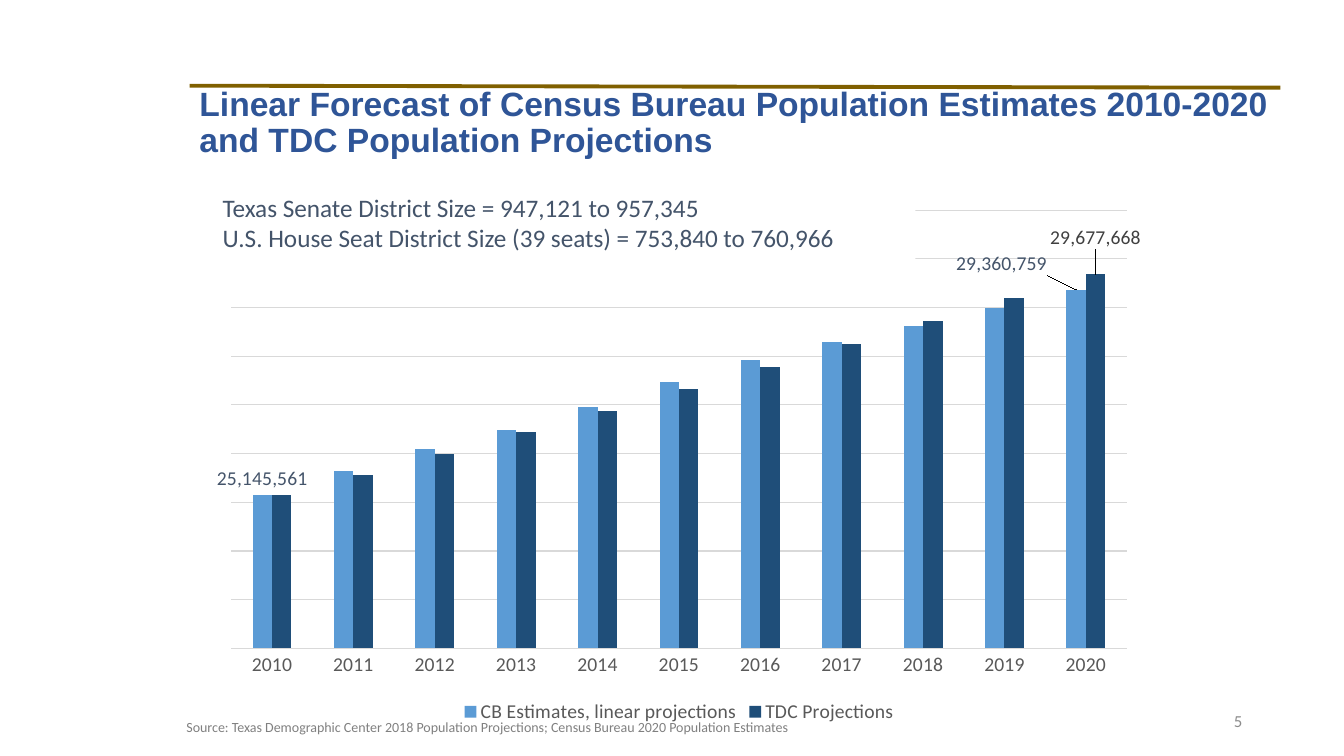
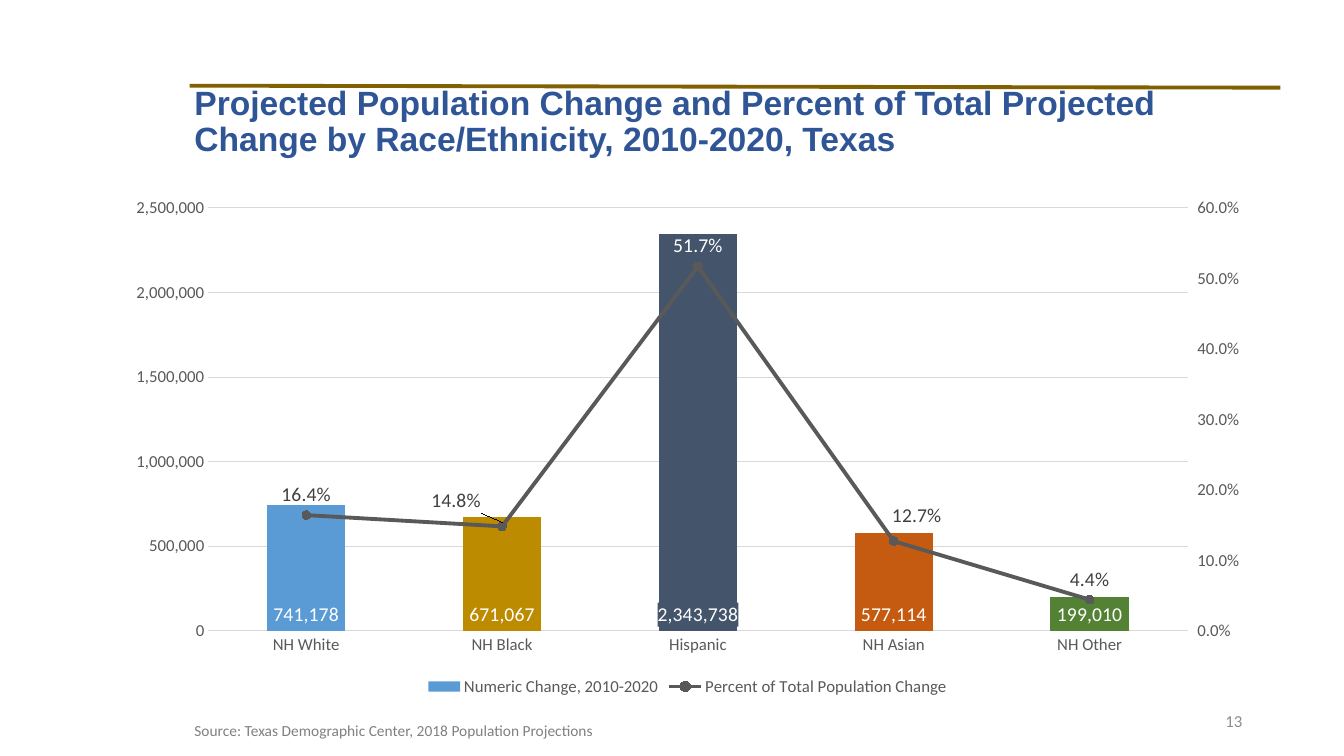
"""Build two slides of Texas population charts."""
from pptx import Presentation, oxml
from pptx.chart.axis import ValueAxis
from pptx.chart.data import CategoryChartData
from pptx.dml.color import RGBColor
from pptx.enum import chart as ch, shapes, text
from pptx.oxml import ns
from pptx.util import Inches, Pt

WHITE = RGBColor(0xFF, 0xFF, 0xFF)
BLACK = RGBColor(0, 0, 0)
GOLD_RULE = RGBColor(0x80, 0x60, 0x00)
TITLE_BLUE = RGBColor(0x2F, 0x55, 0x97)
SLATE = RGBColor(0x44, 0x54, 0x6A)
SKY = RGBColor(0x5B, 0x9B, 0xD5)
NAVY = RGBColor(0x1F, 0x4E, 0x79)
MUSTARD = RGBColor(0xBC, 0x8B, 0x00)
RUST = RGBColor(0xC5, 0x5A, 0x11)
GREEN = RGBColor(0x54, 0x82, 0x35)
INK = RGBColor(0x40, 0x40, 0x40)
AXIS_GRAY = RGBColor(0x59, 0x59, 0x59)
SOURCE_GRAY = RGBColor(0x80, 0x80, 0x80)
NUMBER_GRAY = RGBColor(0x8C, 0x8C, 0x8C)
GRID_GRAY = RGBColor(0xD9, 0xD9, 0xD9)

COUNT = "#,##0"
PERCENT = "0.0%"
ABOVE = ch.XL_LABEL_POSITION.ABOVE
OUTSIDE = ch.XL_LABEL_POSITION.OUTSIDE_END

YEARS = [str(year) for year in range(2010, 2021)]
ESTIMATES = [25145561, 25645629, 26084481, 26480266, 26964333, 27470056,
             27914410, 28295273, 28628666, 28995881, 29360067]
PROJECTIONS = [25145561, 25567291, 25996722, 26433242, 26876429, 27326193,
               27782691, 28245982, 28716123, 29193268, 29677668]
GROUPS = ["NH White", "NH Black", "Hispanic", "NH Asian", "NH Other"]
CHANGES = [741178, 671067, 2343738, 577114, 199010]
SHARES = [0.164, 0.148, 0.517, 0.127, 0.044]


def inches(*lengths):
    return [Inches(length) for length in lengths]


def chart_xml(tag, body):
    return oxml.parse_xml(f"<c:{tag} {ns.nsdecls('c', 'a')}>{body}</c:{tag}>")


def style_font(font, size, color, name="Calibri", bold=False):
    font.size, font.name, font.bold = Pt(size), name, bold
    font.color.rgb = color


def fill_text(shape, content, size, color, name="Calibri", bold=False,
              align=text.PP_ALIGN.LEFT, anchor=text.MSO_ANCHOR.TOP,
              wrap=True, spacing=None):
    frame = shape.text_frame
    frame.text = content
    frame.word_wrap = wrap
    frame.vertical_anchor = anchor
    for para in frame.paragraphs:
        para.alignment = align
        para.line_spacing = spacing
        for span in para.runs:
            style_font(span.font, size, color, name, bold)


def add_text(page, at, content, size, color, **options):
    fill_text(page.shapes.add_textbox(*inches(*at)), content, size, color, **options)


def add_rule(page):
    rule = page.shapes.add_connector(shapes.MSO_CONNECTOR.STRAIGHT,
                                     *inches(1.88, 0.85, 12.7, 0.87))
    rule.line.color.rgb = GOLD_RULE
    rule.line.width = Pt(2.75)
    rule.element.spPr.append(oxml.parse_xml(f"<a:effectLst {ns.nsdecls('a')}/>"))


def add_page(deck, number):
    page = deck.slides.add_slide(deck.slide_layouts[6])
    add_rule(page)
    add_text(page, (9.42, 6.95, 3, 0.4), str(number), 12, NUMBER_GRAY,
             align=text.PP_ALIGN.RIGHT, anchor=text.MSO_ANCHOR.MIDDLE)
    return page


def add_title(page, at, content):
    add_text(page, at, content, 24, TITLE_BLUE, name="Arial", bold=True,
             anchor=text.MSO_ANCHOR.MIDDLE, spacing=0.9)


def place_plot(chart, plot_area):
    values = "".join(f'<c:{key} val="{value}"/>' for key, value in zip("xywh", plot_area))
    layout = chart_xml("layout", '<c:manualLayout><c:layoutTarget val="inner"/>'
                       f'<c:xMode val="edge"/><c:yMode val="edge"/>{values}</c:manualLayout>')
    plot_node = chart.element.xpath(".//c:plotArea")[0]
    for node in plot_node.xpath("./c:layout"):
        plot_node.remove(node)
    plot_node.insert(0, layout)


def add_column_chart(page, at, data, size, gap, plot_area):
    chart = page.shapes.add_chart(ch.XL_CHART_TYPE.COLUMN_CLUSTERED,
                                  *inches(*at), data).chart
    style_font(chart.font, size, BLACK)
    chart.has_title = False
    chart.has_legend = True
    chart.legend.position = ch.XL_LEGEND_POSITION.BOTTOM
    chart.legend.include_in_layout = False
    style_font(chart.legend.font, size, AXIS_GRAY)
    chart.plots[0].gap_width = gap
    chart.plots[0].vary_by_categories = False
    for axis in (chart.category_axis, chart.value_axis):
        axis.major_tick_mark = ch.XL_TICK_MARK.NONE
        style_font(axis.tick_labels.font, size, AXIS_GRAY)
    chart.value_axis.tick_labels.number_format = COUNT
    chart.value_axis.tick_labels.number_format_is_linked = False
    chart.value_axis.format.line.fill.background()
    for line in (chart.category_axis.format.line,
                 chart.value_axis.major_gridlines.format.line):
        line.color.rgb = GRID_GRAY
        line.width = Pt(0.75)
    place_plot(chart, plot_area)
    return chart


def paint(target, color):
    target.format.fill.solid()
    target.format.fill.fore_color.rgb = color


def label_series(series, position, number_format, color):
    labels = series.data_labels
    labels.show_value = True
    labels.position = position
    labels.number_format = number_format
    labels.number_format_is_linked = False
    style_font(labels.font, 14, color)


def label_point(chart, series, point, position, color, shift=None, words=None, fill=None):
    label = series.points[point].data_label
    if words:
        label.text_frame.text = words
        style_font(label.text_frame.paragraphs[0].runs[0].font, 14, color)
    else:
        style_font(label.font, 14, color)
    label.position = position
    node = chart.element.xpath(f".//c:ser[c:idx/@val='{series.index}']"
                               f"/c:dLbls/c:dLbl[c:idx/@val='{point}']")[0]
    if shift:
        node.xpath("./c:idx")[0].addnext(chart_xml(
            "layout", f'<c:manualLayout><c:x val="{shift[0]}"/>'
                      f'<c:y val="{shift[1]}"/></c:manualLayout>'))
    if fill:
        node.xpath("./c:txPr")[0].addprevious(chart_xml(
            "spPr", f'<a:solidFill><a:srgbClr val="{fill}"/></a:solidFill>'))


def set_leader_lines(chart, visible):
    for labels in chart.element.xpath(".//c:dLbls"):
        for node in labels.xpath("./c:showLeaderLines"):
            labels.remove(node)
        labels.append(chart_xml(
            "extLst", '<c:ext uri="{CE6537A1-D6FC-4f65-9D91-7224C49458BB}" '
            'xmlns:c15="http://schemas.microsoft.com/office/drawing/2012/chart">'
            f'<c15:showLeaderLines val="{int(visible)}"/></c:ext>'))


def move_to_right_axis(chart):
    """Turn the last column series into a line on a second axis."""
    columns = chart.element.xpath(".//c:barChart")[0]
    series = columns.xpath("./c:ser")[-1]
    for node in series.xpath("./c:invertIfNegative"):
        series.remove(node)
    lines = chart_xml("lineChart", '<c:grouping val="standard"/><c:varyColors val="0"/>'
                      '<c:marker val="1"/><c:axId val="5001"/><c:axId val="5002"/>')
    lines.insert(2, series)
    columns.addnext(lines)
    scaling = '<c:scaling><c:orientation val="minMax"/></c:scaling>'
    right = chart_xml("valAx", f'<c:axId val="5002"/>{scaling}<c:delete val="0"/>'
                      '<c:axPos val="r"/><c:majorTickMark val="out"/>'
                      '<c:minorTickMark val="none"/><c:tickLblPos val="nextTo"/>'
                      '<c:crossAx val="5001"/><c:crosses val="max"/>')
    hidden = chart_xml("catAx", f'<c:axId val="5001"/>{scaling}<c:delete val="1"/>'
                       '<c:axPos val="b"/><c:crossAx val="5002"/><c:crosses val="autoZero"/>')
    chart.element.xpath(".//c:valAx")[-1].addnext(right)
    right.addnext(hidden)
    axis = ValueAxis(right)
    axis.minimum_scale, axis.maximum_scale, axis.major_unit = 0, 0.6, 0.1
    axis.tick_labels.number_format = PERCENT
    axis.tick_labels.number_format_is_linked = False
    style_font(axis.tick_labels.font, 12, AXIS_GRAY)
    axis.format.line.fill.background()
    return chart.plots[1].series[0]


def build_forecast(deck):
    page = add_page(deck, 5)
    add_title(page, (1.88, 0.73, 10.82, 1),
              "Linear Forecast of Census Bureau Population Estimates 2010-2020 "
              "and TDC Population Projections")
    data = CategoryChartData(number_format=COUNT)
    data.categories = YEARS
    data.add_series("CB Estimates, linear projections", ESTIMATES)
    data.add_series("TDC Projections", PROJECTIONS)
    chart = add_column_chart(page, (2.11, 1.98, 9.25, 5.24), data, 14, 219,
                             (0.02, 0.02, 0.96, 0.83))
    axis = chart.value_axis
    axis.minimum_scale, axis.maximum_scale, axis.major_unit = 22e6, 31e6, 1e6
    axis.visible = False
    estimates, projections = chart.plots[0].series
    for series, color in ((estimates, SKY), (projections, NAVY)):
        paint(series, color)
        series.data_labels.show_value = False
    label_point(chart, estimates, 0, OUTSIDE, SLATE)
    label_point(chart, estimates, 10, OUTSIDE, SLATE, (-0.08, -0.02), "29,360,759")
    label_point(chart, projections, 10, OUTSIDE, INK, (0, -0.04))
    set_leader_lines(chart, True)
    add_text(page, (1.75, 7.08, 9.58, 0.27),
             "Source: Texas Demographic Center 2018 Population Projections; "
             "Census Bureau 2020 Population Estimates", 10, SOURCE_GRAY)
    note = page.shapes.add_shape(shapes.MSO_SHAPE.RECTANGLE, *inches(2.11, 1.86, 6.97, 0.71))
    note.shadow.inherit = False
    note.fill.solid()
    note.fill.fore_color.rgb = WHITE
    note.line.fill.background()
    fill_text(note, "Texas Senate District Size = 947,121 to 957,345\n"
              "U.S. House Seat District Size (39 seats) = 753,840 to 760,966", 18, SLATE)


def build_change(deck):
    page = add_page(deck, 13)
    data = CategoryChartData(number_format=COUNT)
    data.categories = GROUPS
    data.add_series("Numeric Change, 2010-2020", CHANGES)
    data.add_series("Percent of Total Population Change", SHARES, PERCENT)
    chart = add_column_chart(page, (1.12, 1.86, 11.4, 5.09), data, 12, 150,
                             (0.083, 0.04, 0.852, 0.824))
    axis = chart.value_axis
    axis.minimum_scale, axis.maximum_scale, axis.major_unit = 0, 2500000, 500000
    shares = move_to_right_axis(chart)
    changes = chart.plots[0].series[0]
    paint(changes, SKY)
    for point, color in enumerate((MUSTARD, SLATE, RUST, GREEN), 1):
        paint(changes.points[point], color)
    inside_base = ch.XL_LABEL_POSITION.INSIDE_BASE
    label_series(changes, inside_base, COUNT, WHITE)
    label_point(chart, changes, 2, inside_base, WHITE, fill=SLATE)
    shares.smooth = False
    shares.format.line.color.rgb = AXIS_GRAY
    shares.format.line.width = Pt(2.75)
    shares.marker.style = ch.XL_MARKER_STYLE.CIRCLE
    shares.marker.size = 6
    paint(shares.marker, AXIS_GRAY)
    shares.marker.format.line.color.rgb = AXIS_GRAY
    label_series(shares, ABOVE, PERCENT, INK)
    label_point(chart, shares, 1, ABOVE, INK, (-0.04, -0.01))
    label_point(chart, shares, 2, ABOVE, WHITE)
    label_point(chart, shares, 3, ABOVE, INK, (0.02, -0.01))
    set_leader_lines(chart, False)
    add_title(page, (1.83, 0.86, 10.84, 0.71),
              "Projected Population Change and Percent of Total Projected "
              "Change by Race/Ethnicity, 2010-2020, Texas")
    add_text(page, (1.83, 7.1, 4.38, 0.29),
             "Source: Texas Demographic Center, 2018 Population Projections",
             11, SOURCE_GRAY, wrap=False)


def main():
    deck = Presentation()
    deck.slide_width, deck.slide_height = inches(13.33, 7.5)
    build_forecast(deck)
    build_change(deck)
    deck.save("out.pptx")


if __name__ == "__main__":
    main()
